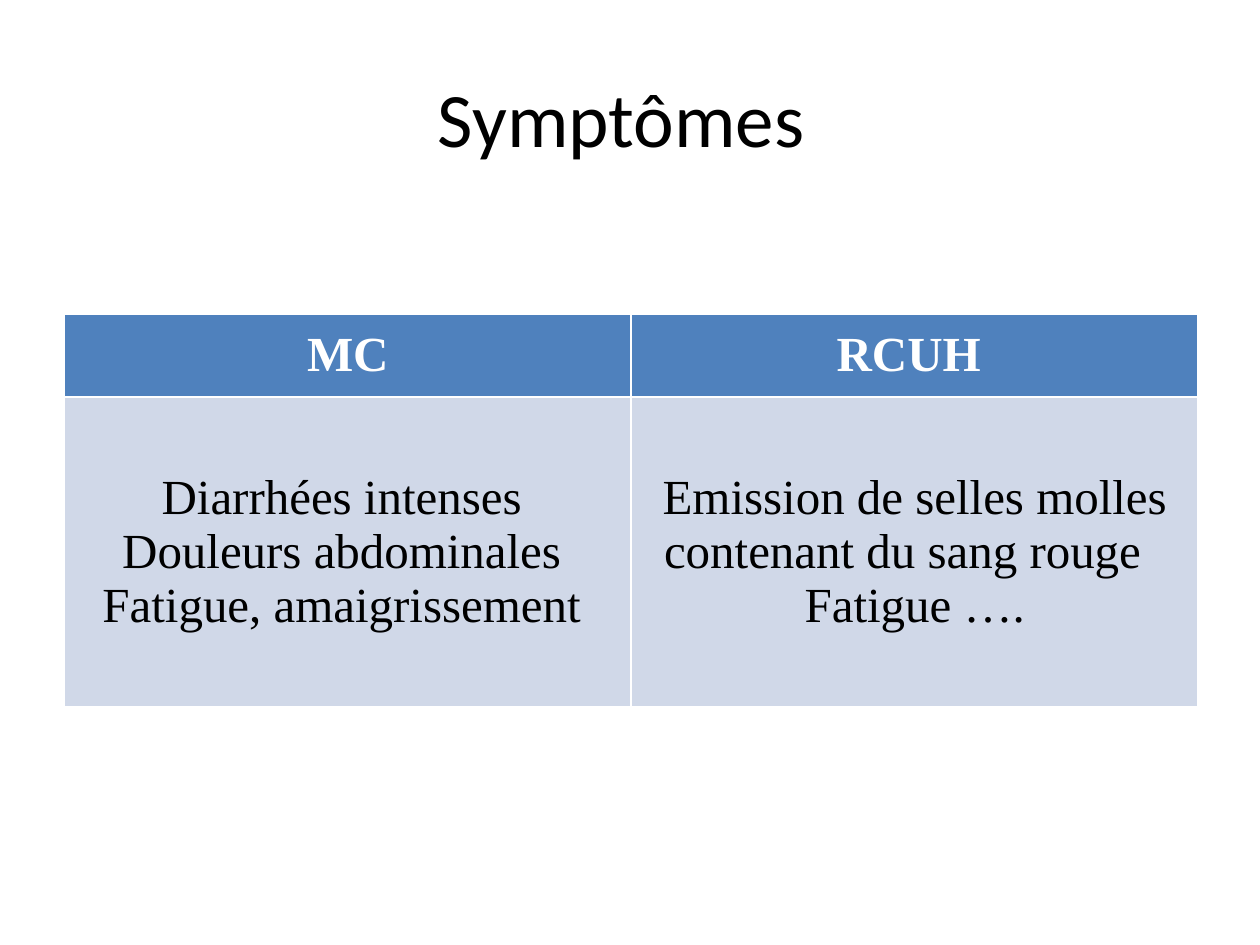
from pptx import Presentation
from pptx.dml.color import RGBColor
from pptx.enum.text import MSO_ANCHOR, PP_ALIGN
from pptx.util import Inches, Pt

COLORS = {"text": "000000", "header_text": "FFFFFF",
          "header_fill": "4F81BD", "body_fill": "D0D8E8"}

TITLE_FONT = {"name": "Calibri", "size": Pt(44), "bold": False}
HEADER_FONT = {"name": "Times New Roman", "size": Pt(28), "bold": True}
BODY_FONT = {**HEADER_FONT, "bold": False}

HEADERS = ["MC", "RCUH "]
SYMPTOMS = [
    ["Diarrhées intenses ", "Douleurs abdominales ", "Fatigue, amaigrissement "],
    ["Emission de selles molles contenant du sang rouge  ", "Fatigue …."],
]
ROW_HEIGHTS = [0.66, 2.46]
COLUMN_WIDTH = 4.5


def rgb(key):
    return RGBColor.from_string(COLORS[key])


def write_centered(frame, lines, font_format, color):
    frame.text = "\n".join(lines)
    for paragraph in frame.paragraphs:
        paragraph.alignment = PP_ALIGN.CENTER
        font = paragraph.runs[0].font
        for attribute, value in font_format.items():
            setattr(font, attribute, value)
        font.color.rgb = rgb(color)


def add_title(slide, text):
    title = slide.shapes.title
    title.left, title.top = Inches(0.5), Inches(0.3)
    title.width, title.height = Inches(9), Inches(1.25)
    title.text_frame.vertical_anchor = MSO_ANCHOR.MIDDLE
    write_centered(title.text_frame, [text], TITLE_FONT, "text")


def fill_cell(cell, lines, font_format, color, fill):
    cell.fill.solid()
    cell.fill.fore_color.rgb = rgb(fill)
    cell.vertical_anchor = MSO_ANCHOR.MIDDLE
    write_centered(cell.text_frame, lines, font_format, color)


def add_symptom_table(slide):
    """The default table style supplies the white borders."""
    table = slide.shapes.add_table(
        len(ROW_HEIGHTS), len(HEADERS), Inches(0.51), Inches(2.49),
        Inches(COLUMN_WIDTH * len(HEADERS)), Inches(sum(ROW_HEIGHTS))).table
    for row, height in zip(table.rows, ROW_HEIGHTS):
        row.height = Inches(height)
    for column, (disease, symptoms) in enumerate(zip(HEADERS, SYMPTOMS)):
        fill_cell(table.cell(0, column), [disease], HEADER_FONT,
                  "header_text", "header_fill")
        fill_cell(table.cell(1, column), symptoms, BODY_FONT,
                  "text", "body_fill")


def main():
    presentation = Presentation()
    presentation.slide_width = Inches(10)
    presentation.slide_height = Inches(7.5)
    slide = presentation.slides.add_slide(presentation.slide_layouts[5])
    add_title(slide, "Symptômes ")
    add_symptom_table(slide)
    presentation.save("out.pptx")


if __name__ == "__main__":
    main()
